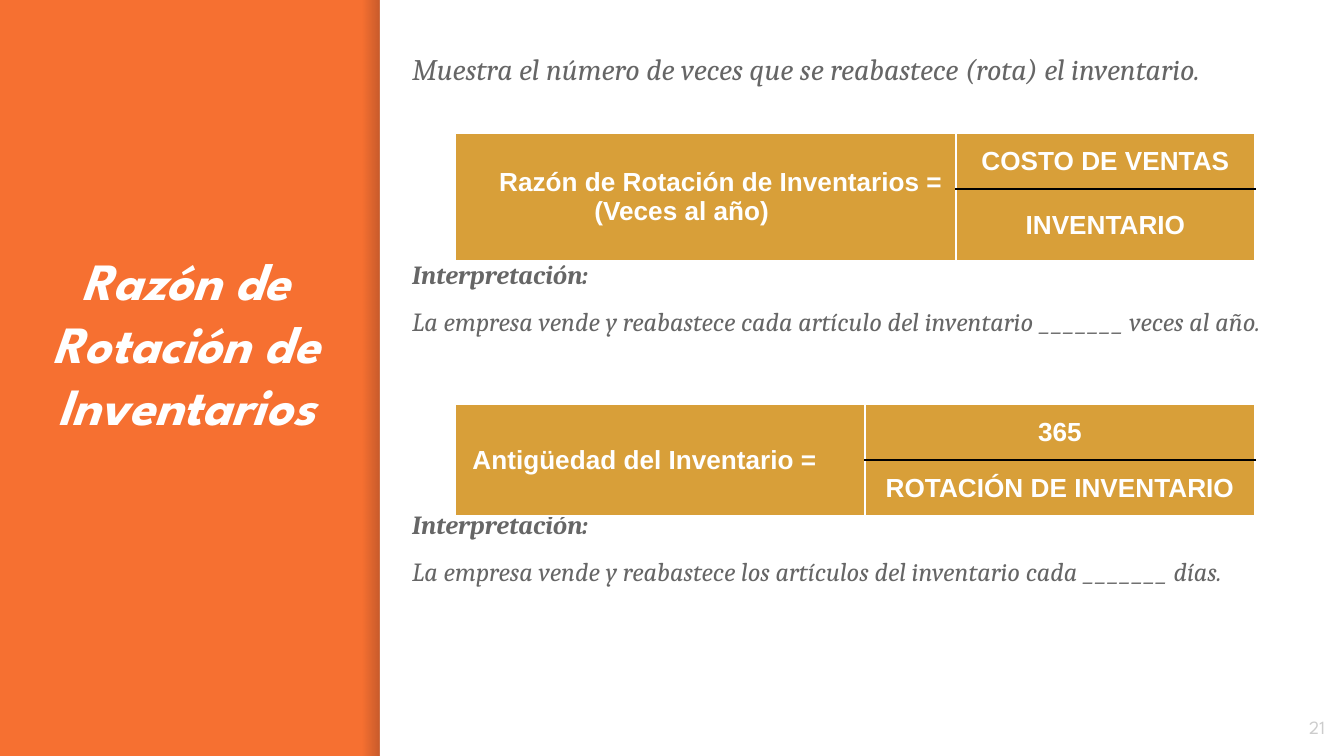
from dataclasses import dataclass
from typing import Any

from lxml.etree import SubElement
from pptx import Presentation
from pptx.dml.color import RGBColor
from pptx.enum.shapes import MSO_SHAPE as Shape
from pptx.enum.text import MSO_ANCHOR as Anchor, MSO_AUTO_SIZE as AutoSize, PP_ALIGN as Align
from pptx.oxml.ns import qn
from pptx.util import Emu, Pt

SCALE = 914400 / 134.4
ORANGE, GOLD, WHITE, GREY, PALE = "F67031", "D89F39", "FFFFFF", "666666", "CCCCCC"
SHADE, BLACK = "000014", "000000"
BODY = {"name": "Cambria", "size": Pt(14), "italic": True, "bold": False}
LEAD = {**BODY, "size": Pt(16)}
LABEL = {**BODY, "bold": True}
FORMULA = {"name": "Arial", "size": Pt(14), "bold": True}
HEADING = {"name": "League Spartan", "size": Pt(28), "bold": True, "italic": True}
NUMBER = {"name": "League Spartan", "size": Pt(10), "bold": False}
TIGHT, WIDE = 6, 89.5


@dataclass(frozen=True)
class Line:
    """One paragraph with its format, alignment, left indent and spacing."""
    text: str
    font: dict[str, Any]
    color: str
    align: Align = Align.LEFT
    indent: int = 0
    before: float = 0
    spacing: float = 1.0


@dataclass(frozen=True)
class Ratio:
    """A formula: its name on the left, a fraction on the right."""
    top: int
    columns: tuple[int, int]
    rows: tuple[int, int]
    name: tuple[Line, ...]
    fraction: tuple[str, str]


def px(length: int) -> Emu:
    """Turn pixels into EMU."""
    return Emu(round(length * SCALE))


def rgb(value: str) -> RGBColor:
    """Turn a hex string into a colour."""
    return RGBColor.from_string(value)


def paint(target: Any, color: str) -> None:
    """Fill a shape, cell or background with one colour."""
    target.fill.solid()
    target.fill.fore_color.rgb = rgb(color)


def write(frame: Any, lines: tuple[Line, ...]) -> None:
    """Write paragraphs into a text frame."""
    for index, line in enumerate(lines):
        para = frame.add_paragraph() if index else frame.paragraphs[0]
        para.alignment = line.align
        para.space_before = Pt(line.before)
        para.line_spacing = line.spacing
        if line.indent:
            para._p.get_or_add_pPr().set("marL", str(px(line.indent)))
        span = para.add_run()
        span.text = line.text
        for key, value in line.font.items():
            setattr(span.font, key, value)
        span.font.color.rgb = rgb(line.color)


def fill_box(box: Any, anchor: Anchor, *lines: Line) -> None:
    """Set a box's margins and anchor, then write its lines."""
    frame = box.text_frame
    options = {"word_wrap": True, "auto_size": AutoSize.NONE, "vertical_anchor": anchor}
    options |= {f"margin_{side}": px(13) for side in ("left", "right", "top", "bottom")}
    for key, value in options.items():
        setattr(frame, key, value)
    write(frame, lines)


def add_panel(page: Any, left: int, width: int) -> Any:
    """Add a full-height rectangle without line or shadow."""
    panel = page.shapes.add_shape(Shape.RECTANGLE, px(left), 0, px(width), px(756))
    panel.shadow.inherit = False
    panel.line.fill.background()
    return panel


def add_shade(page: Any) -> None:
    """Add the soft shade along the edge of the white panel."""
    shade = add_panel(page, 363, 17)
    shade.fill.gradient()
    shade.fill.gradient_angle = 0
    for stop, alpha in zip(shade.fill.gradient_stops, (0, 20)):
        stop.color.rgb = rgb(SHADE)
    for color, alpha in zip(shade._element.spPr.iter(qn("a:srgbClr")), (0, 20)):
        SubElement(color, qn("a:alpha")).set("val", str(alpha * 1000))


def add_border(cell: Any, side: str) -> None:
    """Draw a thin black line on one side of a cell."""
    properties = cell._tc.get_or_add_tcPr()
    border = properties.makeelement(qn(f"a:{side}"), {"w": str(Pt(1))})
    properties.insert(0, border)
    fill = SubElement(border, qn("a:solidFill"))
    SubElement(fill, qn("a:srgbClr")).set("val", BLACK)


def add_ratio(page: Any, ratio: Ratio) -> None:
    """Add a formula as a table with a merged left cell."""
    table = page.shapes.add_table(2, 2, px(455), px(ratio.top), px(sum(ratio.columns)),
                                  px(sum(ratio.rows))).table
    for flag in ("first_row", "horz_banding"):
        setattr(table, flag, False)
    for column, width in zip(table.columns, ratio.columns):
        column.width = px(width)
    for row, height in zip(table.rows, ratio.rows):
        row.height = px(height)
    for cell in table.iter_cells():
        paint(cell, GOLD)
        cell.vertical_anchor = Anchor.MIDDLE
    table.cell(0, 0).merge(table.cell(1, 0))
    write(table.cell(0, 0).text_frame, ratio.name)
    for row, (text, side) in enumerate(zip(ratio.fraction, ("lnB", "lnT"))):
        cell = table.cell(row, 1)
        write(cell.text_frame, (Line(text, FORMULA, WHITE, Align.CENTER),))
        add_border(cell, side)


def body_line(text: str, font: dict[str, Any], before: float = TIGHT) -> Line:
    """Describe one line of the running text."""
    return Line(text, font, GREY, before=before, spacing=1.15)


RATIOS = (
    Ratio(133, (501, 299), (56, 72),
          (Line("Razón de Rotación de Inventarios =", FORMULA, WHITE, Align.RIGHT),
           Line("(Veces al año)", FORMULA, WHITE, indent=126)),
          ("COSTO DE VENTAS", "INVENTARIO")),
    Ratio(404, (410, 390), (56, 56),
          (Line("Antigüedad del Inventario =", FORMULA, WHITE, indent=4),),
          ("365", "ROTACIÓN DE INVENTARIO")),
)


def main() -> None:
    """Build the slide and save the deck."""
    deck = Presentation()
    deck.slide_width, deck.slide_height = px(1344), px(756)
    page = deck.slides.add_slide(deck.slide_layouts[5])
    paint(page.background, ORANGE)
    add_shade(page)
    paint(add_panel(page, 380, 964), WHITE)

    title = page.shapes.title
    for key, value in {"left": 0, "top": 235, "width": 372, "height": 251}.items():
        setattr(title, key, px(value))
    fill_box(title, Anchor.TOP,
             Line("Razón de Rotación de Inventarios", HEADING, WHITE, Align.CENTER))

    body = page.shapes.add_textbox(px(399), px(32), px(913), px(695))
    fill_box(
        body, Anchor.TOP,
        body_line("Muestra el número de veces que se reabastece (rota) el inventario.", LEAD),
        body_line("Interpretación:", LABEL, WIDE),
        body_line("La empresa vende y reabastece cada artículo del inventario _______ "
                  "veces al año.", BODY),
        body_line("Interpretación:", LABEL, WIDE),
        body_line("La empresa vende y reabastece los artículos del inventario cada _______ "
                  "días.", BODY))

    number = page.shapes.add_textbox(px(1258), px(698), px(80), px(58))
    fill_box(number, Anchor.MIDDLE, Line("21", NUMBER, PALE, Align.RIGHT))

    for ratio in RATIOS:
        add_ratio(page, ratio)
    deck.save("out.pptx")


if __name__ == "__main__":
    main()
